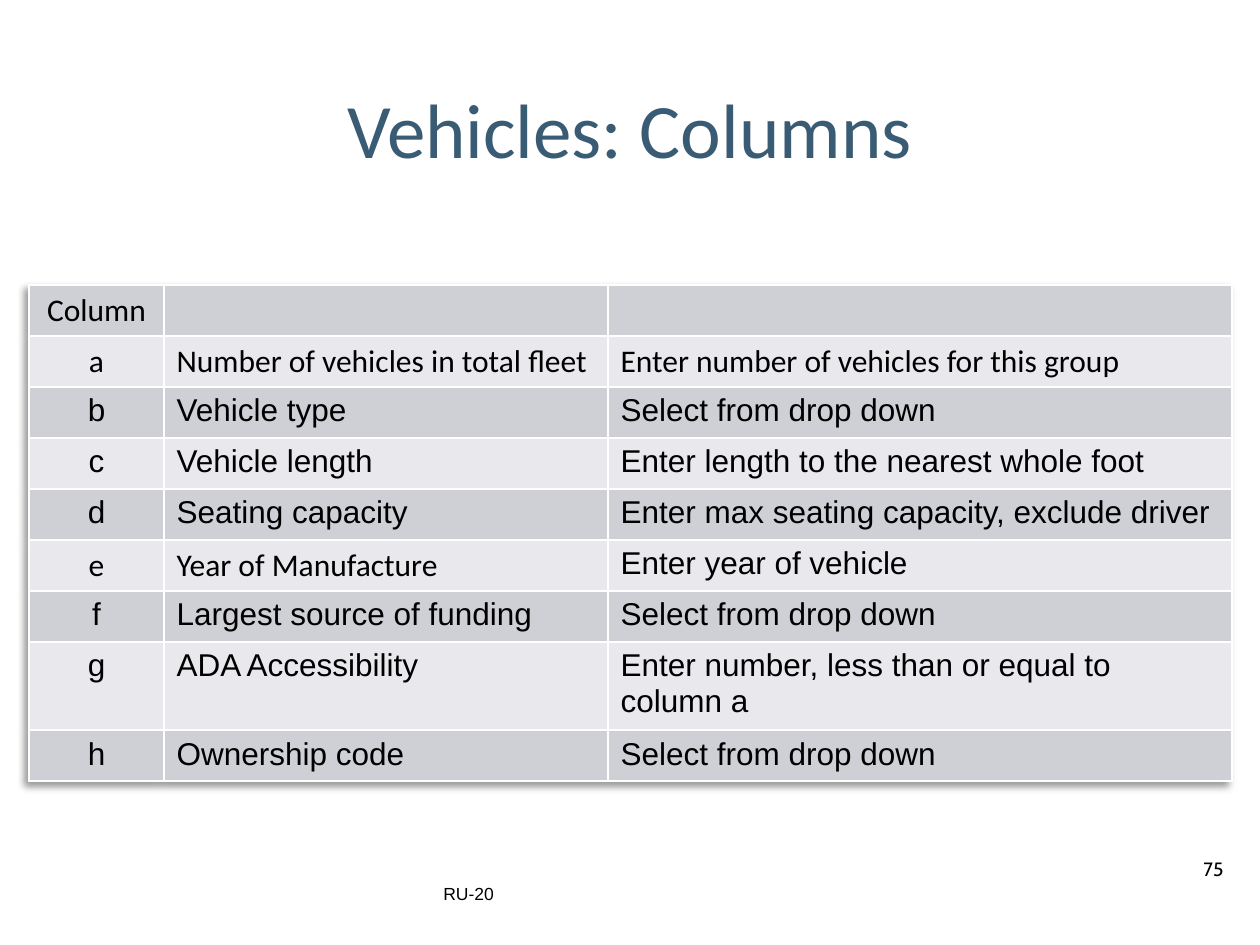
from lxml import etree
from pptx import Presentation
from pptx import util as u
from pptx.dml.color import RGBColor
from pptx.enum import text
from pptx.oxml import ns

EMU_PER_PX = 914400 / 126
COLORS = {"title": "395B74", "ink": "000000", "dark band": "CFCFD6",
          "light band": "E9E8EC", "border": "FFFFFF"}
COLUMN_WIDTHS = [135, 444, 624]
ROW_HEIGHT, TALL_ROW_HEIGHT = 51, 84
TALL_ROW = "g"
ROWS = [
    ("Column", "", ""),
    ("a", "Number of vehicles in total fleet", "Enter number of vehicles for this group"),
    ("b", "Vehicle type", "Select from drop down"),
    ("c", "Vehicle length", "Enter length to the nearest whole foot"),
    ("d", "Seating capacity", "Enter max seating capacity, exclude driver"),
    ("e", "Year of Manufacture", "Enter year of vehicle"),
    ("f", "Largest source of funding", "Select from drop down"),
    ("g", "ADA Accessibility", "Enter number, less than or equal to column a"),
    ("h", "Ownership code", "Select from drop down"),
]
CALIBRI_ROWS = {"Column", "a"}
CALIBRI_CELLS = {"e", "Year of Manufacture"}


def px(length):
    return u.Emu(round(length * EMU_PER_PX))


def color(name):
    return RGBColor.from_string(COLORS[name])


def add_run(paragraph, wording, size, font, ink="ink"):
    run = paragraph.add_run()
    run.text = wording
    run.font.size = u.Pt(size)
    run.font.name = font
    run.font.color.rgb = color(ink)


def add_label(slide, box, wording, size, font, ink="ink",
              align=text.PP_ALIGN.LEFT, anchor=text.MSO_ANCHOR.TOP):
    frame = slide.shapes.add_textbox(*map(px, box)).text_frame
    frame.word_wrap = True
    frame.vertical_anchor = anchor
    frame.paragraphs[0].alignment = align
    add_run(frame.paragraphs[0], wording, size, font, ink)


def add_borders(cell):
    properties = cell._tc.get_or_add_tcPr()
    for side in ("lnL", "lnR", "lnT", "lnB"):
        line = etree.SubElement(properties, ns.qn(f"a:{side}"), w=str(u.Pt(1)))
        fill = etree.SubElement(line, ns.qn("a:solidFill"))
        etree.SubElement(fill, ns.qn("a:srgbClr"), val=COLORS["border"])


def add_table_shadow(table):
    """Cast a soft shadow towards the lower left of the whole table."""
    effects = etree.Element(ns.qn("a:effectLst"))
    shadow = etree.SubElement(effects, ns.qn("a:outerShdw"), blurRad=str(u.Pt(4)),
                              dist=str(u.Pt(3)), dir="8100000", algn="tr", rotWithShape="0")
    ink = etree.SubElement(shadow, ns.qn("a:srgbClr"), val=COLORS["ink"])
    etree.SubElement(ink, ns.qn("a:alpha"), val="40000")
    table._tbl.tblPr.insert(0, effects)


def add_columns_table(slide, left, top):
    heights = [TALL_ROW_HEIGHT if row[0] == TALL_ROW else ROW_HEIGHT for row in ROWS]
    box = (left, top, sum(COLUMN_WIDTHS), sum(heights))
    table = slide.shapes.add_table(len(ROWS), len(COLUMN_WIDTHS), *map(px, box)).table
    table.first_row = table.horz_banding = False
    add_table_shadow(table)
    for column, width in zip(table.columns, COLUMN_WIDTHS):
        column.width = px(width)
    for r, (entries, height) in enumerate(zip(ROWS, heights)):
        table.rows[r].height = px(height)
        for c, wording in enumerate(entries):
            cell = table.cell(r, c)
            add_borders(cell)
            cell.fill.solid()
            cell.fill.fore_color.rgb = color("light band" if r % 2 else "dark band")
            paragraph = cell.text_frame.paragraphs[0]
            if c == 0:
                paragraph.alignment = text.PP_ALIGN.CENTER
            if wording:
                calibri = entries[0] in CALIBRI_ROWS or wording in CALIBRI_CELLS
                add_run(paragraph, wording, 18, "Calibri" if calibri else "Arial")


def main():
    deck = Presentation()
    deck.slide_width, deck.slide_height = px(1260), px(945)
    slide = deck.slides.add_slide(deck.slide_layouts[6])
    add_label(slide, (63, 60, 1134, 135), "Vehicles: Columns", 44, "Calibri", "title",
              text.PP_ALIGN.CENTER, text.MSO_ANCHOR.MIDDLE)
    add_label(slide, (1191, 851, 63, 50), "75", 11, "Cabin")
    add_columns_table(slide, 29, 285)
    add_label(slide, (431, 877, 399, 50), "RU-20", 10, "Arial")
    deck.save("out.pptx")


if __name__ == "__main__":
    main()
